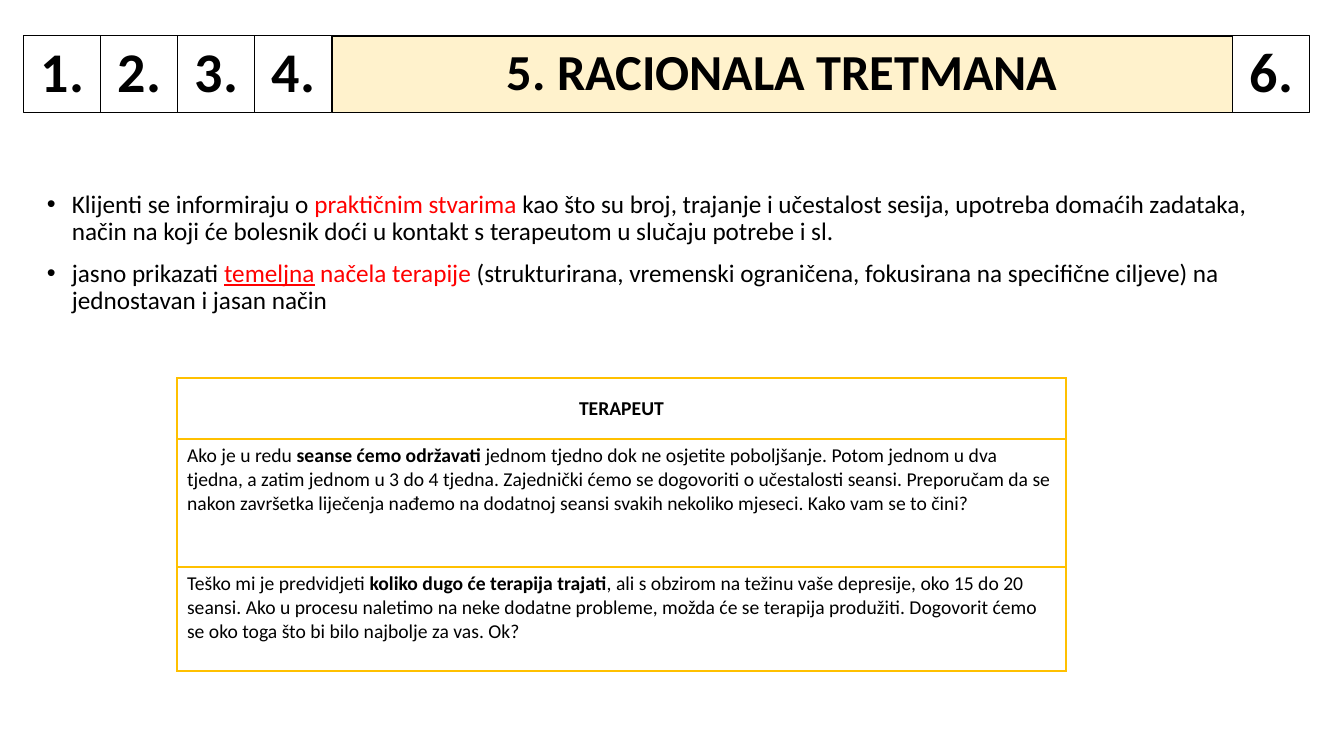
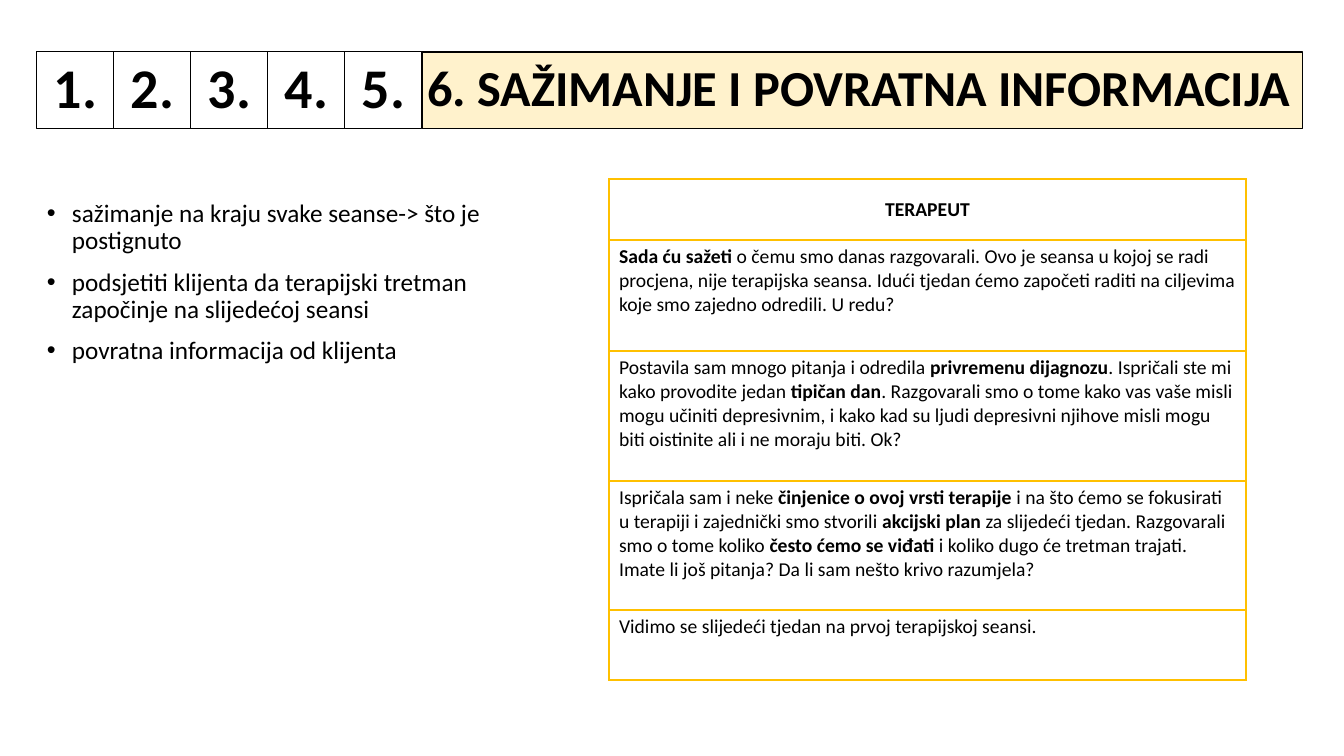
from lxml.etree import SubElement
from pptx import Presentation
from pptx.dml.color import RGBColor
from pptx.enum.shapes import MSO_SHAPE
from pptx.enum.text import MSO_ANCHOR, MSO_AUTO_SIZE, PP_ALIGN
from pptx.oxml import parse_xml
from pptx.oxml.ns import nsdecls, qn
from pptx.util import Emu, Pt

WIDTH, HEIGHT = 1344, 756
SCALE = 12192000 / WIDTH
FONT = "Calibri"
BLACK = RGBColor(0, 0, 0)
WHITE = RGBColor(255, 255, 255)
RED = RGBColor(255, 0, 0)
CREAM = RGBColor(0xFF, 0xF2, 0xCC)
GOLD = RGBColor(0xFF, 0xC0, 0x00)
STEPS = 6
STEP = 77
HEAD = 61
INSET = 5
INDENT = 25


def px(n):
    return Emu(round(n * SCALE))


def box(*sides):
    return [px(n) for n in sides]


def bold(text):
    return text, {"bold": True}


def red(text, line=False):
    return text, {"color": RED, "under": line}


def add_run(para, text, size, bold=False, color=BLACK, under=False):
    run = para.add_run()
    run.text = text
    font = run.font
    font.name = FONT
    font.size = Pt(size)
    font.bold = bold
    font.underline = under
    font.color.rgb = color


def add_bullet(para):
    props = para._p.get_or_add_pPr()
    props.set("marL", str(px(INDENT)))
    props.set("indent", str(-px(INDENT)))
    SubElement(props, qn("a:buFont")).set("typeface", "Arial")
    SubElement(props, qn("a:buChar")).set("char", "•")


def write(frame, paras, size, align=PP_ALIGN.LEFT, space=1.0, before=0,
          bullet=False, **style):
    frame.word_wrap = True
    for i, parts in enumerate(paras):
        para = frame.paragraphs[0] if i == 0 else frame.add_paragraph()
        para.alignment = align
        para.line_spacing = space
        para.space_before = Pt(before)
        if bullet:
            add_bullet(para)
        for part in parts:
            text, extra = (part, {}) if isinstance(part, str) else part
            add_run(para, text, size, **{**style, **extra})


def style_tile(shape, text, fill, size, align=PP_ALIGN.CENTER):
    shape.fill.solid()
    shape.fill.fore_color.rgb = fill
    shape.line.color.rgb = BLACK
    shape.line.width = Pt(0.75)
    frame = shape.text_frame
    frame.auto_size = MSO_AUTO_SIZE.NONE
    frame.vertical_anchor = MSO_ANCHOR.MIDDLE
    frame.margin_left = frame.margin_right = px(INSET)
    frame.margin_top = frame.margin_bottom = px(INSET)
    write(frame, [[text]], size, align=align, space=0.9, bold=True)


def add_steps(slide, left, top, active, title, wide, align):
    for num in range(1, STEPS + 1):
        if num == active:
            shape = slide.shapes.title
            shape.left, shape.top, shape.width, shape.height = box(
                left, top, wide, STEP)
            style_tile(shape, f"{num}. {title}", CREAM, 36, align)
            left += wide
        else:
            shape = slide.shapes.add_shape(
                MSO_SHAPE.RECTANGLE, *box(left, top, STEP, STEP))
            shape.shadow.inherit = False
            style_tile(shape, f"{num}.", WHITE, 40)
            left += STEP


def add_list(slide, place, items):
    shape = slide.shapes.add_textbox(*box(*place))
    write(shape.text_frame, items, 18, space=0.9, before=10, bullet=True)


def set_edges(cell):
    props = cell._tc.get_or_add_tcPr()
    for i, side in enumerate("LRTB"):
        props.insert(i, parse_xml(
            f'<a:ln{side} {nsdecls("a")} w="12700"><a:solidFill>'
            f'<a:srgbClr val="{GOLD}"/></a:solidFill></a:ln{side}>'))


def add_script(slide, left, top, wide, lines):
    rows = [(HEAD, ["TERAPEUT"]), *lines]
    tall = sum(size for size, _ in rows)
    table = slide.shapes.add_table(
        len(rows), 1, *box(left, top, wide, tall)).table
    table.first_row = table.horz_banding = False
    for i, (size, parts) in enumerate(rows):
        table.rows[i].height = px(size)
        cell = table.cell(i, 0)
        cell.fill.solid()
        cell.fill.fore_color.rgb = WHITE
        set_edges(cell)
        head = i == 0
        cell.vertical_anchor = MSO_ANCHOR.MIDDLE if head else MSO_ANCHOR.TOP
        align = PP_ALIGN.CENTER if head else PP_ALIGN.LEFT
        write(cell.text_frame, [parts], 14, align=align, bold=head)


def add_slide(deck):
    return deck.slides.add_slide(deck.slide_layouts.get_by_name("Title Only"))


def add_plan(deck):
    slide = add_slide(deck)
    add_steps(slide, 24, 36, 5, "RACIONALA TRETMANA", 901, PP_ALIGN.CENTER)
    add_list(slide, (37, 187, 1261, 552), [
        ["Klijenti se informiraju o ", red("praktičnim stvarima "),
         "kao što su broj, trajanje i učestalost sesija, upotreba domaćih "
         "zadataka, način na koji će bolesnik doći u kontakt s terapeutom "
         "u slučaju potrebe i sl."],
        ["jasno prikazati ", red("temeljna", line=True),
         red(" načela terapije "),
         "(strukturirana, vremenski ograničena, fokusirana na specifične "
         "ciljeve) na jednostavan i jasan način"],
    ])
    add_script(slide, 177, 378, 889, [
        (128, ["Ako je u redu ", bold("seanse ćemo održavati "),
               "jednom tjedno dok ne osjetite poboljšanje. Potom jednom u "
               "dva tjedna, a zatim jednom u 3 do 4 tjedna. Zajednički ćemo "
               "se dogovoriti o učestalosti seansi. Preporučam da se nakon "
               "završetka liječenja nađemo na dodatnoj seansi svakih "
               "nekoliko mjeseci. Kako vam se to čini?"]),
        (104, ["Teško mi je predvidjeti ",
               bold("koliko dugo će terapija trajati"),
               ", ali s obzirom na težinu vaše depresije, oko 15 do 20 "
               "seansi. Ako u procesu naletimo na neke dodatne probleme, "
               "možda će se terapija produžiti. Dogovorit ćemo se oko toga "
               "što bi bilo najbolje za vas. Ok?"]),
    ])


def add_close(deck):
    slide = add_slide(deck)
    add_steps(slide, 37, 52, 6, "SAŽIMANJE I POVRATNA INFORMACIJA", 881,
              PP_ALIGN.LEFT)
    add_list(slide, (37, 196, 535, 402), [
        ["sažimanje na kraju svake seanse-> što je postignuto"],
        ["podsjetiti klijenta da terapijski tretman započinje na "
         "slijedećoj seansi"],
        ["povratna informacija od klijenta"],
    ])
    add_script(slide, 609, 179, 637, [
        (111, [bold("Sada ću sažeti "),
               "o čemu smo danas razgovarali. Ovo je seansa u kojoj se radi "
               "procjena, nije terapijska seansa. Idući tjedan ćemo "
               "započeti raditi na ciljevima koje smo zajedno odredili. "
               "U redu?"]),
        (130, ["Postavila sam mnogo pitanja i odredila ",
               bold("privremenu dijagnozu"),
               ". Ispričali ste mi kako provodite jedan ",
               bold("tipičan dan"),
               ". Razgovarali smo o tome kako vas vaše misli mogu učiniti "
               "depresivnim, i kako kad su ljudi depresivni njihove misli "
               "mogu biti oistinite ali i ne moraju biti. Ok?"]),
        (129, ["Ispričala sam i neke ",
               bold("činjenice o ovoj vrsti terapije "),
               "i na što ćemo se fokusirati u terapiji i zajednički smo "
               "stvorili ", bold("akcijski plan "),
               "za slijedeći tjedan. Razgovarali smo o tome koliko ",
               bold("često ćemo se viđati "),
               "i koliko dugo će tretman trajati. Imate li još pitanja? "
               "Da li sam nešto krivo razumjela?"]),
        (70, ["Vidimo se slijedeći tjedan na prvoj terapijskoj seansi."]),
    ])


def main():
    deck = Presentation()
    deck.slide_width, deck.slide_height = box(WIDTH, HEIGHT)
    add_plan(deck)
    add_close(deck)
    deck.save("out.pptx")


if __name__ == "__main__":
    main()
